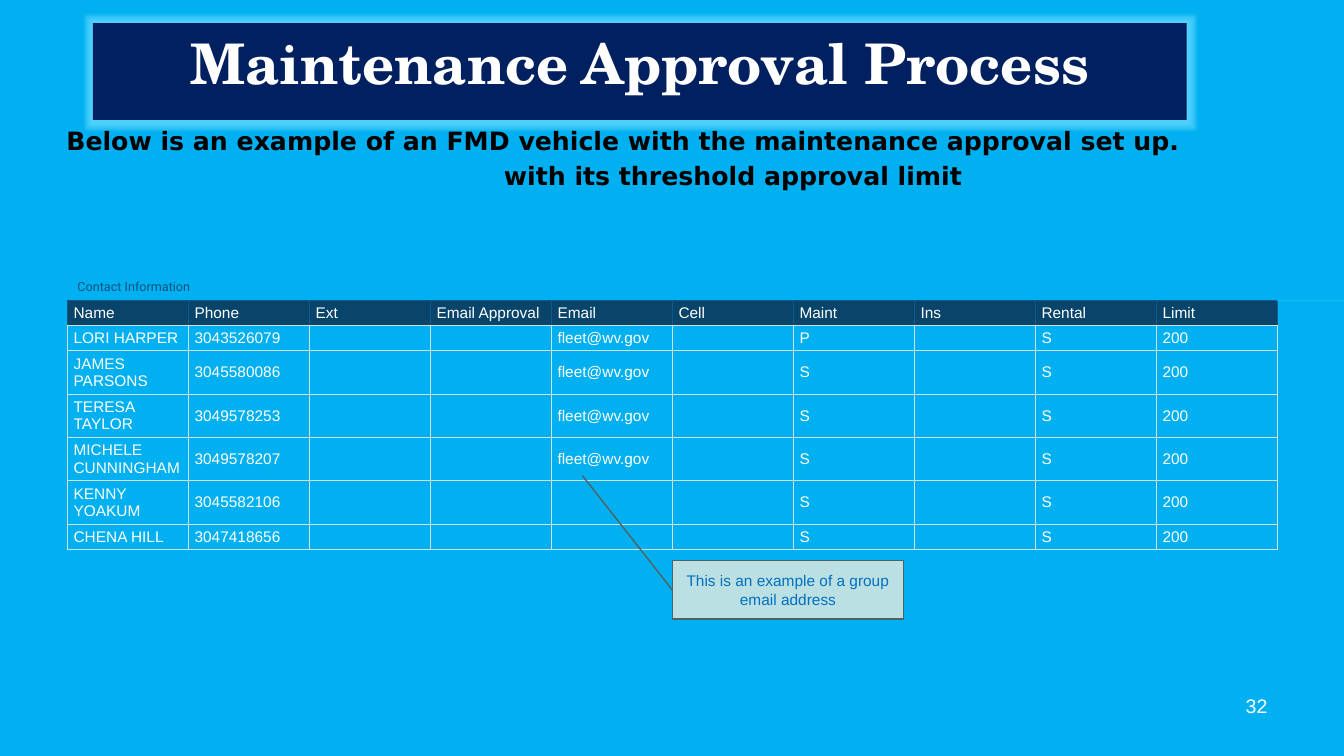
from lxml import etree
from pptx import Presentation
from pptx.dml.color import RGBColor
from pptx.enum import shapes, text
from pptx.oxml import ns
from pptx.util import Inches, Pt

# Content
TITLE = [("Maintenance", 40), (" ", 32), ("Approval Process", 40)]
INTRO = [  # text, left indent
    ("Below is an example of an FMD vehicle with the maintenance approval set up.", 0),
    ("with its threshold approval limit", 4.34),
]
LABEL = "Contact Information"
NOTE = "This is an example of a group email address"
PAGE = "32"
HEAD = ["Name", "Phone", "Ext", "Email Approval", "Email",
        "Cell", "Maint", "Ins", "Rental", "Limit"]
MAIL = "fleet@wv.gov"
PEOPLE = [  # name, phone, email, maint, row height
    ("LORI HARPER", "3043526079", MAIL, "P", 0.25),
    ("JAMES PARSONS", "3045580086", MAIL, "S", 0.43),
    ("TERESA TAYLOR", "3049578253", MAIL, "S", 0.43),
    ("MICHELE CUNNINGHAM", "3049578207", MAIL, "S", 0.43),
    ("KENNY YOAKUM", "3045582106", "", "S", 0.43),
    ("CHENA HILL", "3047418656", "", "S", 0.25),
]

# Colours
SKY = RGBColor(0x00, 0xB0, 0xF0)
NAVY = RGBColor(0x00, 0x20, 0x60)
WHITE = RGBColor(0xFF, 0xFF, 0xFF)
BLACK = RGBColor(0x00, 0x00, 0x00)
TEAL = RGBColor(0x09, 0x44, 0x6B)
EDGE = RGBColor(0x0C, 0x5A, 0x8E)
GRID = RGBColor(0xD7, 0xDE, 0xE0)
RULE = RGBColor(0x18, 0xB8, 0xF2)
INK = RGBColor(0x09, 0x51, 0x82)
PALE = RGBColor(0xBB, 0xE0, 0xE3)
GREY = RGBColor(0x52, 0x62, 0x63)
BLUE = RGBColor(0x00, 0x70, 0xC0)
GLOW = RGBColor(0x60, 0xD8, 0xFF)

LEFT, TOP, WIDE = 0.67, 2.98, 12

deck = Presentation()
deck.slide_width, deck.slide_height = Inches(13.33), Inches(7.5)
slide = deck.slides.add_slide(deck.slide_layouts[6])
slide.background.fill.solid()
slide.background.fill.fore_color.rgb = SKY


def style(para, size, color, face="Arial", bold=False, align=None):
    font = para.font
    font.name, font.size, font.bold = face, Pt(size), bold
    font.color.rgb = color
    para.alignment = align


def add_text(x, y, w, h):
    frame = slide.shapes.add_textbox(*map(Inches, (x, y, w, h))).text_frame
    frame.word_wrap = True
    return frame


def add_xml(parent, tag, **attrs):
    return etree.SubElement(parent, ns.qn(tag), **attrs)


def set_edge(cell, side, color):
    line = add_xml(cell._tc.get_or_add_tcPr(), "a:ln" + side, w=str(Pt(0.75)))
    add_xml(add_xml(line, "a:solidFill"), "a:srgbClr", val=str(color))


# Title banner with a soft glow
banner = slide.shapes.add_shape(
    shapes.MSO_SHAPE.RECTANGLE, Inches(0.92), Inches(0.23), Inches(10.85), Inches(0.96))
banner.fill.solid()
banner.fill.fore_color.rgb = NAVY
banner.line.fill.background()
effects = add_xml(banner._element.spPr, "a:effectLst")
glow = add_xml(effects, "a:glow", rad=str(Pt(4)))
add_xml(add_xml(glow, "a:srgbClr", val=str(GLOW)), "a:alpha", val="60000")
banner.text_frame.vertical_anchor = text.MSO_ANCHOR.TOP
para = banner.text_frame.paragraphs[0]
style(para, 40, WHITE, "TeX Gyre Schola", True, text.PP_ALIGN.CENTER)
for words, size in TITLE:
    run = para.add_run()
    run.text = words
    run.font.size = Pt(size)

# Introduction
intro = add_text(0.56, 1.19, 12.6, 0.9)
for i, (words, indent) in enumerate(INTRO):
    para = intro.add_paragraph() if i else intro.paragraphs[0]
    para.text = words
    para.space_before = Pt(3.6)
    style(para, 18, BLACK, "DejaVu Sans", True)
    para._p.get_or_add_pPr().set("marL", str(Inches(indent)))

# Page number
page = add_text(9.56, 6.83, 3.11, 0.52)
page.text = PAGE
style(page.paragraphs[0], 14, WHITE, align=text.PP_ALIGN.RIGHT)

# Contact table
rows = [HEAD] + [[name, phone, "", "", mail, "", maint, "", "S", "200"]
                 for name, phone, mail, maint, _ in PEOPLE]
tall = [0.25] + [person[-1] for person in PEOPLE]
table = slide.shapes.add_table(
    len(rows), len(HEAD), Inches(LEFT), Inches(TOP), Inches(WIDE), Inches(sum(tall))).table
table.first_row = table.horz_banding = False
for col in table.columns:
    col.width = Inches(WIDE / len(HEAD))
for r, row in enumerate(rows):
    table.rows[r].height = Inches(tall[r])
    for c, words in enumerate(row):
        cell = table.cell(r, c)
        cell.text = words
        cell.vertical_anchor = text.MSO_ANCHOR.MIDDLE
        cell.margin_left = cell.margin_right = Inches(0.06)
        cell.margin_top = cell.margin_bottom = Inches(0.03)
        style(cell.text_frame.paragraphs[0], 11, WHITE)
        for side in "LRTB":
            set_edge(cell, side, EDGE if r == 0 and side != "B" else GRID)
        if r == 0:
            cell.fill.solid()
            cell.fill.fore_color.rgb = TEAL
        else:
            cell.fill.background()

# Table label and the faint rule beside the table
label = add_text(LEFT, 2.72, 3, 0.25)
label.text = LABEL
style(label.paragraphs[0], 9, INK, "Roboto")
rule = slide.shapes.add_connector(
    shapes.MSO_CONNECTOR.STRAIGHT, Inches(LEFT + WIDE), Inches(TOP), Inches(13.33), Inches(TOP))
rule.line.color.rgb = RULE
rule.line.width = Pt(0.5)
add_xml(rule._element.spPr, "a:effectLst")

# Callout pointing at the group address
note = slide.shapes.add_shape(
    shapes.MSO_SHAPE.LINE_CALLOUT_1, Inches(6.67), Inches(5.56), Inches(2.29), Inches(0.58))
for i, value in enumerate((0.51, 0, -1.45, -0.39)):
    note.adjustments[i] = value
note.shadow.inherit = False
note.fill.solid()
note.fill.fore_color.rgb = PALE
note.line.color.rgb = GREY
note.line.width = Pt(1)
note.text_frame.text = NOTE
note.text_frame.vertical_anchor = text.MSO_ANCHOR.MIDDLE
style(note.text_frame.paragraphs[0], 11, BLUE, align=text.PP_ALIGN.CENTER)

deck.save("out.pptx")
